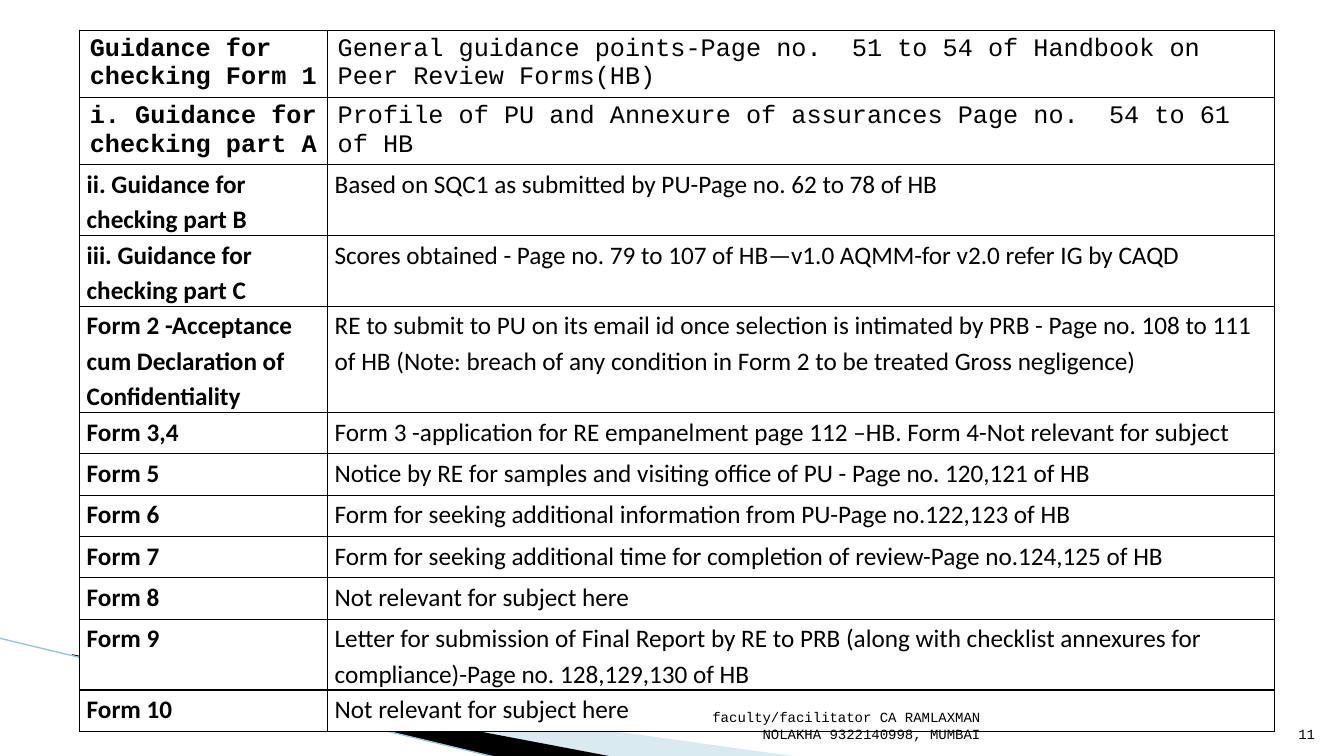
from lxml import etree
from pptx import Presentation
from pptx.dml.color import RGBColor
from pptx.enum.shapes import MSO_CONNECTOR
from pptx.enum.text import MSO_ANCHOR, PP_ALIGN
from pptx.oxml import parse_xml
from pptx.oxml.ns import qn
from pptx.util import Inches, Pt

STRAIGHT = MSO_CONNECTOR.STRAIGHT
BOTTOM = MSO_ANCHOR.BOTTOM
RIGHT = PP_ALIGN.RIGHT
DRAWING_NS = "http://schemas.openxmlformats.org/drawingml/2006/main"

BLACK, WHITE = "000000", "FFFFFF"
PALE_TEAL, LINE_TEAL = "A0CBDC", "97C5D8"
MONO, SANS = "Courier New", "Calibri"

MONO_ROWS = 2
GUIDANCE = [
    ("Guidance for checking Form 1",
     "General guidance points-Page no.  51 to 54 of Handbook on Peer Review Forms(HB)"),
    ("i. Guidance for checking part A",
     "Profile of PU and Annexure of assurances Page no.  54 to 61 of HB"),
    ("ii. Guidance for checking part B",
     "Based on SQC1 as submitted by PU-Page no. 62 to 78 of HB"),
    ("iii. Guidance for checking part C",
     "Scores obtained - Page no. 79 to 107 of HB—v1.0 AQMM-for v2.0 refer IG by CAQD"),
    ("Form 2 -Acceptance cum Declaration of Confidentiality",
     "RE to submit to PU on its email id once selection is intimated by PRB - "
     "Page no. 108 to 111 of HB (Note: breach of any condition in Form 2 to be "
     "treated Gross negligence)"),
    ("Form 3,4",
     "Form 3 -application for RE empanelment page 112 –HB. Form 4-Not relevant for subject"),
    ("Form 5", "Notice by RE for samples and visiting office of PU - Page no. 120,121 of HB"),
    ("Form 6", "Form for seeking additional information from PU-Page no.122,123 of HB"),
    ("Form 7",
     "Form for seeking additional time for completion of review-Page no.124,125 of HB"),
    ("Form 8", "Not relevant for subject here"),
    ("Form 9",
     "Letter for submission of Final Report by RE to PRB (along with checklist "
     "annexures for compliance)-Page no. 128,129,130 of HB"),
    ("Form 10", "Not relevant for subject here"),
]


def color(hex_code):
    return RGBColor.from_string(hex_code)


class SlideBuilder:
    """Places elements on one slide; lengths are percentages of its size."""

    def __init__(self, deck):
        self.deck = deck
        self.slide = deck.slides.add_slide(deck.slide_layouts[6])
        self.shapes = self.slide.shapes
        background = self.slide.background.fill
        background.solid()
        background.fore_color.rgb = color(WHITE)

    def x(self, share):
        return round(self.deck.slide_width * share / 100)

    def y(self, share):
        return round(self.deck.slide_height * share / 100)

    def box(self, left, top, width, height):
        return self.x(left), self.y(top), self.x(width), self.y(height)

    def add_words(self, paragraph, words, font_name, size, bold=False):
        run = paragraph.add_run()
        run.text = words
        run.font.name = font_name
        run.font.size = Pt(size)
        run.font.bold = bold
        run.font.color.rgb = color(BLACK)

    def wedge(self, corners, fill, opacity=100):
        start, *others = [(self.x(h), self.y(v)) for h, v in corners]
        outline = self.shapes.build_freeform(*start)
        outline.add_line_segments(others, close=True)
        shape = outline.convert_to_shape()
        shape.shadow.inherit = False
        shape.line.fill.background()
        shape.fill.solid()
        shape.fill.fore_color.rgb = color(fill)
        if opacity < 100:
            tint = shape._element.spPr.find(qn("a:solidFill"))[0]
            etree.SubElement(tint, qn("a:alpha"), val=str(opacity * 1000))

    def line(self, start, end, stroke, width):
        ends = self.x(start[0]), self.y(start[1]), self.x(end[0]), self.y(end[1])
        connector = self.shapes.add_connector(STRAIGHT, *ends)
        connector.line.color.rgb = color(stroke)
        connector.line.width = Pt(width)
        etree.SubElement(connector._element.spPr, qn("a:effectLst"))

    def footer(self, words, *place):
        frame = self.shapes.add_textbox(*self.box(*place)).text_frame
        frame.word_wrap = True
        frame.vertical_anchor = BOTTOM
        frame.paragraphs[0].alignment = RIGHT
        self.add_words(frame.paragraphs[0], words, MONO, 10)

    def border(self, cell, width=1):
        properties = cell._tc.get_or_add_tcPr()
        for position, side in enumerate(("lnL", "lnR", "lnT", "lnB")):
            properties.insert(position, parse_xml(
                f'<a:{side} xmlns:a="{DRAWING_NS}" w="{Pt(width)}"><a:solidFill>'
                f'<a:srgbClr val="{BLACK}"/></a:solidFill></a:{side}>'))

    def table(self, rows, left, top, column_widths, row_height):
        place = self.box(left, top, sum(column_widths), row_height * len(rows))
        grid = self.shapes.add_table(len(rows), len(column_widths), *place).table
        grid.first_row = grid.horz_banding = False
        for column, width in zip(grid.columns, column_widths):
            column.width = self.x(width)
        for number, entries in enumerate(rows):
            grid.rows[number].height = self.y(row_height)
            for position, words in enumerate(entries):
                cell = grid.cell(number, position)
                cell.fill.solid()
                cell.fill.fore_color.rgb = color(WHITE)
                self.border(cell)
                paragraph = cell.text_frame.paragraphs[0]
                mono = number < MONO_ROWS
                if not mono:
                    cell.margin_left = cell.margin_right = Inches(0.07)
                    cell.margin_top = cell.margin_bottom = 0
                    paragraph.line_spacing = 1.15
                    paragraph.space_after = Pt(10)
                self.add_words(paragraph, words, MONO if mono else SANS, 18, position == 0)


def main():
    deck = Presentation()
    deck.slide_width, deck.slide_height = Inches(13.33), Inches(7.5)
    page = SlideBuilder(deck)
    page.wedge([(5.48, 86.8), (59.49, 100.13), (45.61, 100.13), (5.48, 86.67)],
               PALE_TEAL, opacity=40)
    page.wedge([(5.33, 86.53), (45.69, 100.13), (37.21, 100.27), (5.4, 86.67)], BLACK)
    page.line((-0.08, 84.4), (37.13, 100.27), LINE_TEAL, 0.95)
    page.table(GUIDANCE, 5.93, 4, (18.45, 70.44), 5.47)
    page.footer("11", 94.6, 93.47, 3.98, 5.33)
    page.footer("faculty/facilitator CA RAMLAXMAN NOLAKHA 9322140998, MUMBAI",
                47.94, 93.47, 25.73, 5.33)
    deck.save("out.pptx")


if __name__ == "__main__":
    main()
